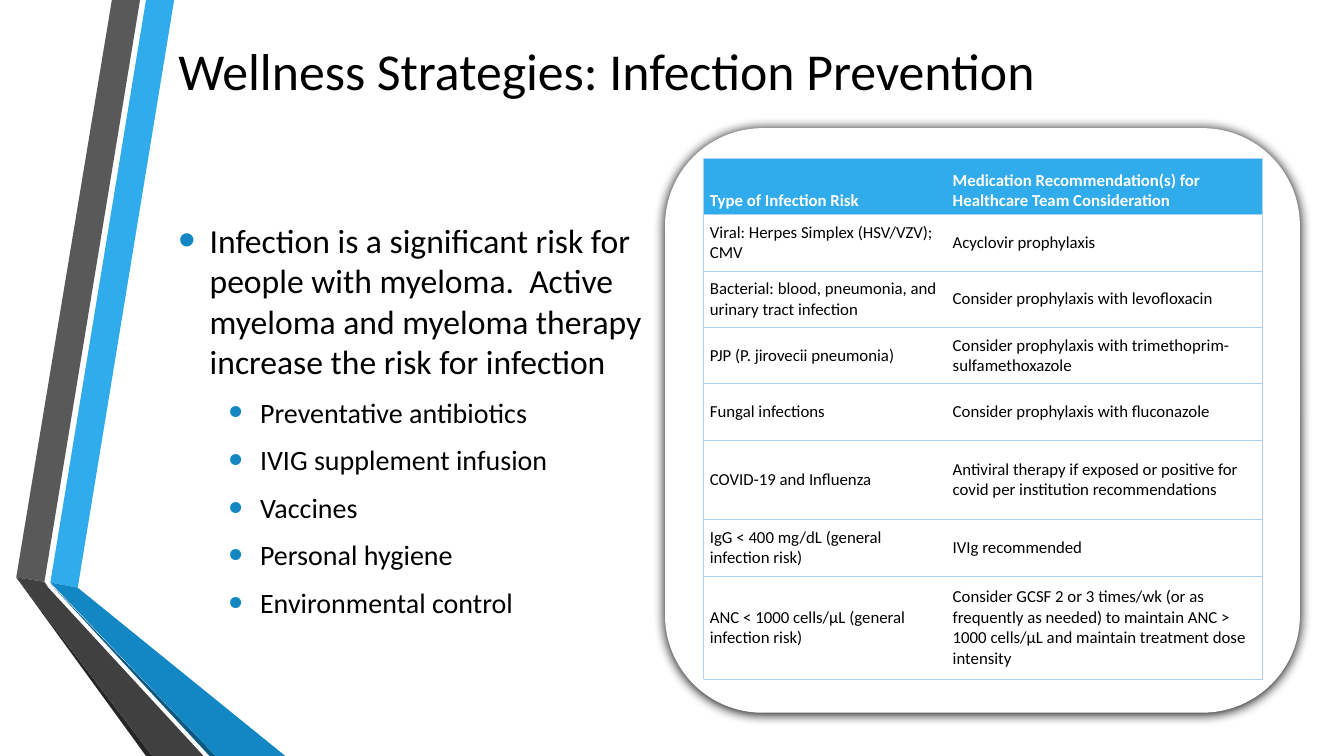
from dataclasses import dataclass

from lxml import etree
from pptx import Presentation
from pptx.dml.color import RGBColor
from pptx.enum.shapes import MSO_SHAPE
from pptx.enum.text import MSO_ANCHOR, MSO_AUTO_SIZE, PP_ALIGN
from pptx.oxml.ns import qn
from pptx.util import Cm, Pt

ROUNDED = MSO_SHAPE.ROUNDED_RECTANGLE
MIDDLE, BOTTOM = MSO_ANCHOR.MIDDLE, MSO_ANCHOR.BOTTOM
LEFT = PP_ALIGN.LEFT
NO_FIT = MSO_AUTO_SIZE.NONE


@dataclass(frozen=True)
class Theme:
    font: str = "Calibri"
    ink: str = "000000"
    paper: str = "FFFFFF"
    sky: str = "30ACEC"
    blue: str = "1287C3"
    navy: str = "0C5A82"
    grey: str = "595959"
    charcoal: str = "404040"
    soot: str = "262626"
    rule: str = "AED2F4"
    title_size: int = 37
    level_sizes: tuple = (24, 20)
    table_size: int = 12


@dataclass(frozen=True)
class Box:
    left: float
    top: float
    width: float
    height: float

    def lengths(self):
        return [Cm(side) for side in (self.left, self.top, self.width, self.height)]

    def inset(self, x, y):
        return Box(self.left + x, self.top + y, self.width - 2 * x, self.height - 2 * y)


THEME = Theme()
PAGE = Box(0, 0, 33.87, 19.05)
TITLE = Box(4.24, 0.43, 23.32, 2.64)
LIST = Box(4.24, 3.99, 12.62, 13.16)
PANEL = Box(16.76, 3.23, 16, 14.73)

RIBBONS = [
    (THEME.sky, [(1.27, 14.68), (1.96, 14.81), (4.39, 0), (3.68, 0)]),
    (THEME.grey, [(3.53, 0), (2.82, 0), (0.41, 14.55), (1.12, 14.66)]),
    (THEME.soot, [(0.41, 14.55), (3.68, 19.05), (3.84, 19.05)]),
    (THEME.navy, [(1.27, 14.71), (5.28, 19.05), (5.44, 19.05)]),
    (THEME.blue, [(1.27, 14.68), (5.44, 19.05), (7.19, 19.05), (1.96, 14.81)]),
    (THEME.charcoal, [(5.13, 19.05), (1.22, 14.81), (1.12, 14.66), (0.41, 14.55), (3.84, 19.05)]),
]
HEADING = "Wellness Strategies: Infection Prevention"
POINTS = [
    (0, "Infection is a significant risk for people with myeloma.  Active myeloma "
        "and myeloma therapy increase the risk for infection"),
    (1, "Preventative antibiotics"),
    (1, "IVIG supplement infusion"),
    (1, "Vaccines"),
    (1, "Personal hygiene"),
    (1, "Environmental control"),
]
COLUMN_WIDTHS = (6.12, 7.95)
RISKS = [
    (1.42, "Type of Infection Risk",
     "Medication Recommendation(s) for Healthcare Team Consideration"),
    (1.42, "Viral: Herpes Simplex (HSV/VZV); CMV", "Acyclovir prophylaxis"),
    (1.42, "Bacterial: blood, pneumonia, and urinary tract infection",
     "Consider prophylaxis with levofloxacin"),
    (1.42, "PJP (P. jirovecii pneumonia)",
     "Consider prophylaxis with trimethoprim-sulfamethoxazole"),
    (1.42, "Fungal infections", "Consider prophylaxis with fluconazole"),
    (2.01, "COVID-19 and Influenza",
     "Antiviral therapy if exposed or positive for covid per institution recommendations"),
    (1.42, "IgG < 400 mg/dL (general infection risk)", "IVIg recommended"),
    (2.59, "ANC < 1000 cells/μL (general infection risk)",
     "Consider GCSF 2 or 3 times/wk (or as frequently as needed) to maintain "
     "ANC > 1000 cells/μL and maintain treatment dose intensity"),
]


def paint(fill, color):
    fill.solid()
    fill.fore_color.rgb = RGBColor.from_string(color)


def add_span(para, text, size, color=THEME.ink, bold=False):
    span = para.add_run()
    span.text = text
    span.font.name = THEME.font
    span.font.size = Pt(size)
    span.font.bold = bold
    span.font.color.rgb = RGBColor.from_string(color)


def add_color(parent, color):
    return etree.SubElement(parent, qn("a:srgbClr"), val=color)


def place_frame(holder, box):
    holder.left, holder.top, holder.width, holder.height = box.lengths()
    frame = holder.text_frame
    frame.word_wrap = True
    frame.auto_size = NO_FIT
    frame.vertical_anchor = MIDDLE
    return frame


def draw_ribbons(page, box):
    for color, corners in RIBBONS:
        points = [(Cm(box.left + x), Cm(box.top + y)) for x, y in corners]
        outline = page.shapes.build_freeform(*points[0])
        outline.add_line_segments(points[1:], close=True)
        ribbon = outline.convert_to_shape()
        ribbon.shadow.inherit = False
        paint(ribbon.fill, color)
        ribbon.line.fill.background()


def write_title(page, box):
    para = place_frame(page.shapes.title, box).paragraphs[0]
    para.alignment = LEFT
    add_span(para, HEADING, THEME.title_size)


def set_bullet(para, level):
    props = para._p.get_or_add_pPr()
    props.set("marL", str(Cm(0.79 + 1.27 * level)))
    props.set("indent", str(-Cm(0.79)))
    add_color(etree.SubElement(props, qn("a:buClr")), THEME.blue)
    etree.SubElement(props, qn("a:buSzPct"), val="145000")
    etree.SubElement(props, qn("a:buFont"), typeface="Arial")
    etree.SubElement(props, qn("a:buChar"), char="•")


def write_list(page, box):
    frame = place_frame(page.placeholders[1], box)
    for index, (level, text) in enumerate(POINTS):
        para = frame.add_paragraph() if index else frame.paragraphs[0]
        para.level = level
        para.space_after = Pt(6)
        set_bullet(para, level)
        add_span(para, text, THEME.level_sizes[level])


def set_borders(cell, column):
    props = cell._tc.get_or_add_tcPr()
    inner = "a:lnR" if column == 0 else "a:lnL"
    for side in ("a:lnL", "a:lnR", "a:lnT", "a:lnB"):
        line = etree.SubElement(props, qn(side), w=str(Pt(0.75)))
        if side == inner:
            etree.SubElement(line, qn("a:noFill"))
        else:
            add_color(etree.SubElement(line, qn("a:solidFill")), THEME.rule)


def fill_cell(cell, text, column, header):
    set_borders(cell, column)
    paint(cell.fill, THEME.sky if header else THEME.paper)
    cell.margin_left = cell.margin_right = Cm(0.15)
    cell.margin_top = cell.margin_bottom = Cm(0.08)
    cell.vertical_anchor = BOTTOM if header else MIDDLE
    color = THEME.paper if header else THEME.ink
    add_span(cell.text_frame.paragraphs[0], text, THEME.table_size, color, header)


def draw_risk_panel(page, box):
    panel = page.shapes.add_shape(ROUNDED, *box.lengths())
    panel.shadow.inherit = False
    paint(panel.fill, THEME.paper)
    panel.line.fill.background()
    effects = panel._element.spPr.find(qn("a:effectLst"))
    shadow = etree.SubElement(effects, qn("a:outerShdw"), blurRad=str(Pt(8.5)),
                              dist=str(Pt(1)), dir="5400000", rotWithShape="0")
    add_color(shadow, THEME.ink)

    inside = box.inset(0.98, 0.76).lengths()
    table = page.shapes.add_table(len(RISKS), len(COLUMN_WIDTHS), *inside).table
    table.horz_banding = False
    for column, width in zip(table.columns, COLUMN_WIDTHS):
        column.width = Cm(width)
    for row, (height, *texts) in enumerate(RISKS):
        table.rows[row].height = Cm(height)
        for column, text in enumerate(texts):
            fill_cell(table.cell(row, column), text, column, row == 0)


def main():
    deck = Presentation()
    deck.slide_width, deck.slide_height = Cm(PAGE.width), Cm(PAGE.height)
    page = deck.slides.add_slide(deck.slide_layouts[1])
    paint(page.background.fill, THEME.paper)
    draw_ribbons(page, PAGE)
    draw_risk_panel(page, PANEL)
    write_list(page, LIST)
    write_title(page, TITLE)
    deck.save("out.pptx")


if __name__ == "__main__":
    main()
